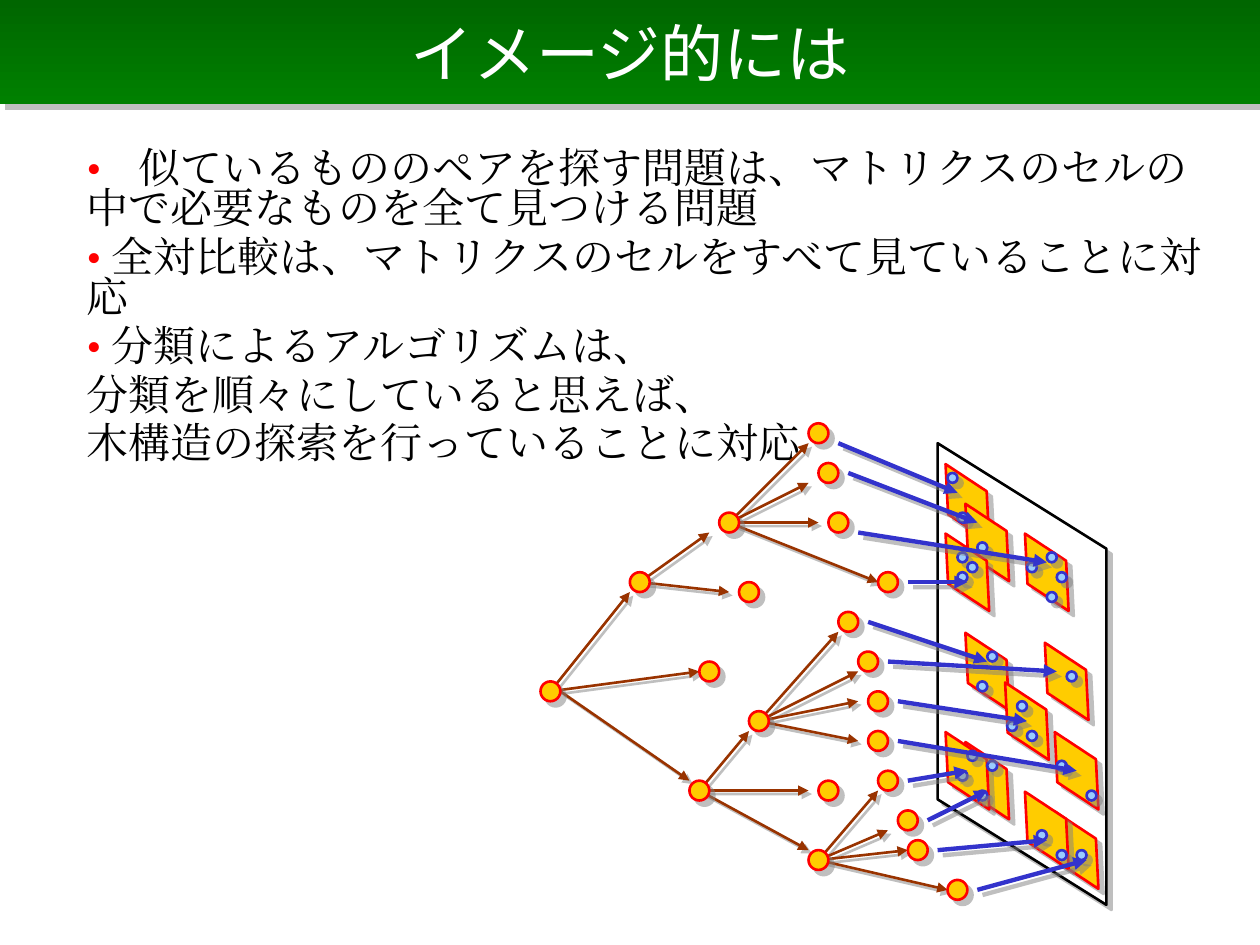
from dataclasses import dataclass

from lxml import etree
from pptx import Presentation
from pptx.dml.color import RGBColor
from pptx.enum.shapes import MSO_CONNECTOR, MSO_SHAPE
from pptx.enum.text import MSO_ANCHOR, PP_ALIGN
from pptx.oxml.ns import qn
from pptx.util import Inches, Pt

RECT, OVAL = MSO_SHAPE.RECTANGLE, MSO_SHAPE.OVAL
PARALLELOGRAM = MSO_SHAPE.PARALLELOGRAM
STRAIGHT = MSO_CONNECTOR.STRAIGHT
MIDDLE, CENTER = MSO_ANCHOR.MIDDLE, PP_ALIGN.CENTER


@dataclass(frozen=True)
class Theme:
    """Colours, type sizes and line widths of the slide."""
    font: str = "Times New Roman"
    title_size: float = 36
    body_size: float = 24
    white: str = "FFFFFF"
    black: str = "000000"
    band_top: str = "006600"
    band_bottom: str = "008000"
    red: str = "FF0000"
    gold: str = "FFCC00"
    sky: str = "99CCFF"
    blue: str = "3333CC"
    brown: str = "993300"
    shadow: str = "808080"
    thin: float = 1.5
    thick: float = 2.5


THEME = Theme()
COLS, ROWS = 58, 49

TITLE = "イメージ的には"
BODY = [
    ("• ", "似ているもののペアを探す問題は、マトリクスのセルの中で必要なものを全て見つける問題", 7.7),
    ("• ", "全対比較は、マトリクスのセルをすべて見ていることに対応", 0),
    ("• ", "分類によるアルゴリズムは、", 0),
    ("", "分類を順々にしていると思えば、", 0),
    ("", "木構造の探索を行っていることに対応", 0),
]
TILES = [(39, 6), (41, 10), (39, 13), (47, 13), (49, 24), (41, 23),
         (45, 28), (50, 41), (47, 39), (41, 34), (39, 33), (50, 33)]
DOTS = [(42, 15), (42, 13), (43, 14), (44, 12), (42, 9), (41, 5), (51, 13),
        (52, 15), (51, 17), (47, 30), (48, 28), (49, 31), (49, 14), (52, 34),
        (55, 37), (53, 25), (45, 23), (44, 26), (44, 37), (45, 34), (42, 35),
        (43, 33), (50, 41), (52, 43), (54, 43)]
POINTERS = [((31, 5), (44, 10)), ((32, 11), (51, 14)), ((37, 16), (43, 16)),
            ((33, 20), (45, 24)), ((35, 24), (52, 25)), ((36, 28), (49, 30)),
            ((30, 2), (42, 7)), ((37, 36), (43, 35)), ((36, 32), (54, 35)),
            ((39, 40), (45, 37)), ((40, 43), (51, 42)), ((44, 47), (55, 44))]
BRANCHES = {
    (1, 27): [(9, 17), (16, 25)],
    (2, 27): [(15, 36)],
    (10, 16): [(17, 11), (19, 17)],
    (19, 10): [(27, 2), (27, 6), (28, 10), (34, 16)],
    (22, 30): [(30, 21), (32, 25), (32, 28), (32, 32)],
    (16, 37): [(21, 31), (27, 37), (27, 43)],
    (28, 44): [(34, 37), (35, 41), (37, 43), (41, 47)],
}
NODES = [(0, 26), (9, 15), (15, 36), (18, 9), (20, 16), (16, 24), (21, 29),
         (27, 43), (27, 0), (28, 4), (29, 9), (34, 15), (30, 19), (32, 23),
         (33, 27), (33, 31), (28, 36), (34, 35), (36, 39), (37, 42), (41, 46)]


def rgb(color):
    """Turn a hex string into a colour."""
    return RGBColor.from_string(color)


def cast_shadow(sp, distance=4.2):
    """Give a shape or connector a hard, half-transparent shadow."""
    effects = etree.SubElement(sp._element.spPr, qn("a:effectLst"))
    outer = etree.SubElement(effects, qn("a:outerShdw"), blurRad="0",
                             dist=str(Pt(distance)), dir="2700000",
                             algn="ctr", rotWithShape="0")
    color = etree.SubElement(outer, qn("a:srgbClr"), val=THEME.shadow)
    etree.SubElement(color, qn("a:alpha"), val="50000")


def grid_shape(slide, box, kind, cell, size, fill, line, rotation=0, slant=None):
    """Place an outlined shape on the grid of the box."""
    x, y, w, h = box
    sp = slide.shapes.add_shape(
        kind, int(x + cell[0] * w / COLS), int(y + cell[1] * h / ROWS),
        int(size[0] * w / COLS), int(size[1] * h / ROWS))
    sp.rotation = rotation
    if slant is not None:
        sp.adjustments[0] = slant
    sp.fill.solid()
    sp.fill.fore_color.rgb = rgb(fill)
    sp.line.color.rgb = rgb(line)
    sp.line.width = Pt(THEME.thin)
    cast_shadow(sp)


def grid_arrow(slide, box, start, end, color, width, distance):
    """Draw an arrow between two points on the grid of the box."""
    x, y, w, h = box
    points = [int(v) for col, row in (start, end)
              for v in (x + col * w / COLS, y + row * h / ROWS)]
    arrow = slide.shapes.add_connector(STRAIGHT, *points)
    arrow.line.color.rgb = rgb(color)
    arrow.line.width = Pt(width)
    etree.SubElement(arrow.line._get_or_add_ln(), qn("a:tailEnd"), type="triangle")
    cast_shadow(arrow, distance)


def add_matrix(slide, box):
    """Draw the slanted matrix panel with its cells and items."""
    grid_shape(slide, box, PARALLELOGRAM, (25.25, 16.75), (46.5, 17),
               THEME.white, THEME.black, 270, 0.625)
    for cell in TILES:
        grid_shape(slide, box, PARALLELOGRAM, cell, (8, 4),
                   THEME.gold, THEME.red, 267.1, 0.735)
    for cell in DOTS:
        grid_shape(slide, box, OVAL, cell, (1, 1), THEME.sky, THEME.blue)


def add_title(slide, box):
    """Draw the green title band."""
    sp = slide.shapes.add_shape(RECT, *box)
    sp.fill.gradient()
    sp.fill.gradient_angle = 270
    for stop, color, position in zip(sp.fill.gradient_stops,
                                     (THEME.band_top, THEME.band_bottom), (0, 1)):
        stop.color.rgb = rgb(color)
        stop.position = position
    sp.line.fill.background()
    cast_shadow(sp)
    tf = sp.text_frame
    tf.vertical_anchor = MIDDLE
    p = tf.paragraphs[0]
    p.text = TITLE
    p.alignment = CENTER
    p.font.name, p.font.size = THEME.font, Pt(THEME.title_size)
    p.font.color.rgb = rgb(THEME.white)


def add_body(slide, box):
    """Write the paragraphs with their red bullets."""
    tf = slide.shapes.add_textbox(*box).text_frame
    tf.word_wrap = True
    for i, (bullet, text, tracking) in enumerate(BODY):
        p = tf.add_paragraph() if i else tf.paragraphs[0]
        p.line_spacing = 0.8
        p.space_before = Pt(0.2 * THEME.body_size)
        p.font.size = Pt(THEME.body_size)
        for part, color in ((bullet, THEME.red), (text, THEME.black)):
            if part:
                r = p.add_run()
                r.text = part
                r.font.color.rgb = rgb(color)
                r.font.name = THEME.font
                etree.SubElement(r.font._element, qn("a:ea"), typeface=THEME.font)
        if tracking:
            p.runs[0].font._element.set("spc", str(int(tracking * 100)))


def add_tree(slide, box):
    """Draw the search tree and the pointers from its leaves."""
    for start, end in POINTERS:
        grid_arrow(slide, box, start, end, THEME.blue, THEME.thick, 4.2)
    for start, ends in BRANCHES.items():
        for end in ends:
            grid_arrow(slide, box, start, end, THEME.brown, THEME.thin, 2.8)
    for cell in NODES:
        grid_shape(slide, box, OVAL, cell, (2, 2), THEME.gold, THEME.red)


def main():
    """Build the slide and save it."""
    prs = Presentation()
    prs.slide_width, prs.slide_height = Inches(10), Inches(7.5)
    slide = prs.slides.add_slide(prs.slide_layouts[6])
    diagram = [Inches(v) for v in (4.29, 3.36, 4.57, 3.86)]
    add_matrix(slide, diagram)
    add_title(slide, [Inches(v) for v in (0, 0, 10, 0.83)])
    add_body(slide, [Inches(v) for v in (0.59, 1.15, 9.06, 3.23)])
    add_tree(slide, diagram)
    prs.save("out.pptx")


if __name__ == "__main__":
    main()
